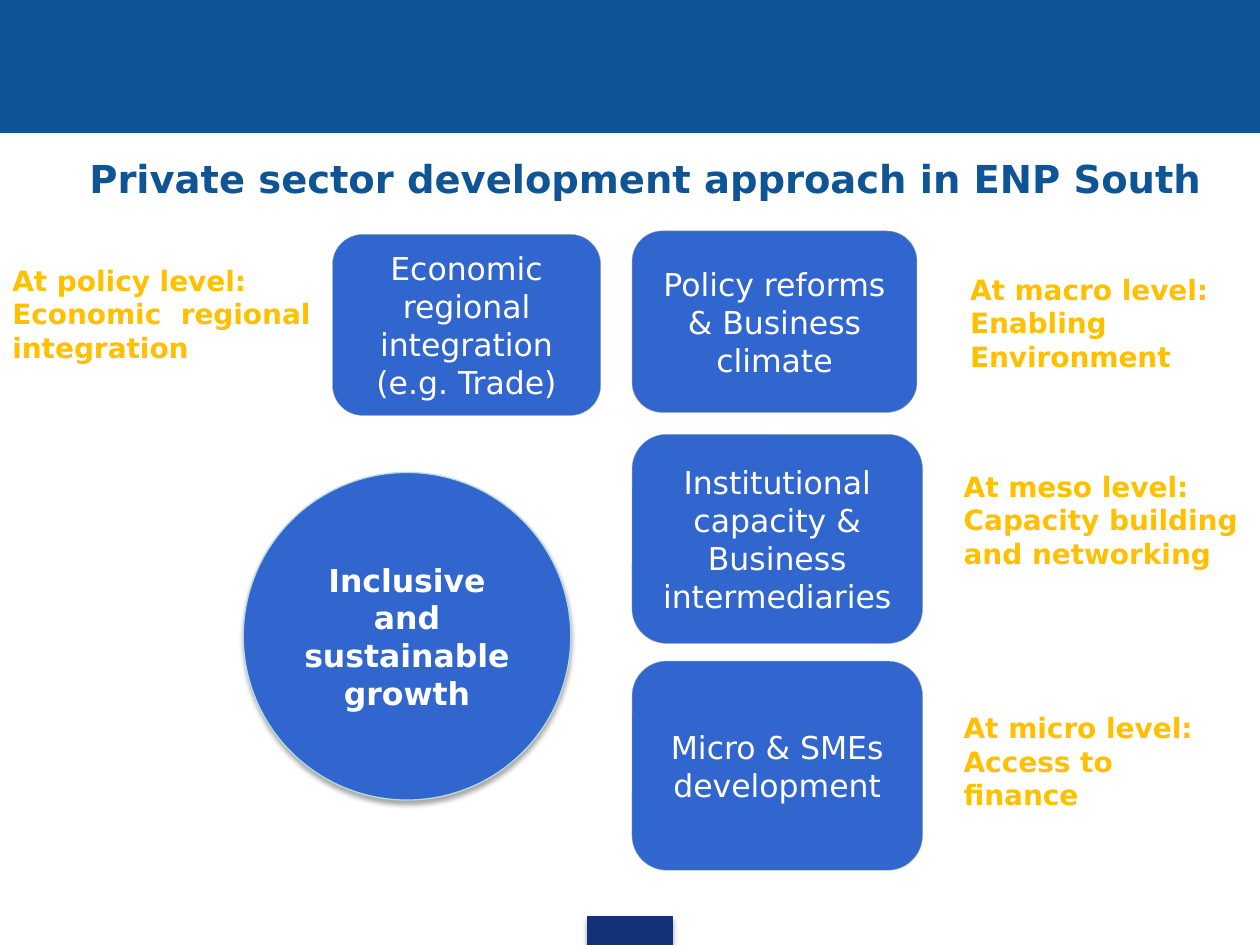
from pptx import Presentation
from pptx.dml.color import RGBColor as RGB
from pptx.enum.shapes import MSO_SHAPE as SHAPE
from pptx.enum.text import MSO_ANCHOR as ANCHOR, PP_ALIGN as ALIGN
from pptx.oxml import parse_xml
from pptx.util import Pt

FONT = "DejaVu Sans"
HEX = {
    "band": "0F5494", "foot": "133176", "box": "3166CF", "edge": "8AA6A8",
    "rim": "B6DCDF", "label": "FFC000", "text": "FFFFFF",
}
NS = "http://schemas.openxmlformats.org/drawingml/2006/main"
SHADE = (
    f'<a:effectLst xmlns:a="{NS}"><a:outerShdw blurRad="{Pt(3.1)}" '
    f'dist="{Pt(1.8)}" dir="5400000" rotWithShape="0"><a:srgbClr val="000000">'
    '<a:alpha val="35000"/></a:srgbClr></a:outerShdw></a:effectLst>'
)


def write(frame, lines, size, color, bold=False, align=ALIGN.LEFT):
    frame.word_wrap = True
    frame.text = "\n".join(lines)
    for para in frame.paragraphs:
        para.alignment = align
        font = para.font
        font.name, font.size, font.bold = FONT, Pt(size), bold
        font.color.rgb = RGB.from_string(HEX[color])


def add_form(slide, kind, box, fill, line, width, shade=False):
    form = slide.shapes.add_shape(kind, *map(Pt, box))
    form.fill.solid()
    form.fill.fore_color.rgb = RGB.from_string(HEX[fill])
    form.line.color.rgb = RGB.from_string(HEX[line])
    form.line.width = Pt(width)
    if shade:
        form._element.spPr.append(parse_xml(SHADE))
    else:
        form.shadow.inherit = False
    return form


def add_frame(slide, box):
    # Top band and footer tab
    left, top, width, height = box
    add_form(slide, SHAPE.RECTANGLE, (left, top, width, 75.6),
             "band", "band", 0.75)
    tab_w, tab_h = 48.4, 16
    add_form(slide, SHAPE.RECTANGLE,
             (left + (width - tab_w) / 2, top + height - tab_h, tab_w, tab_h),
             "foot", "foot", 0.75, shade=True)


def add_title(slide, box, text):
    frame = slide.shapes.add_textbox(*map(Pt, box)).text_frame
    frame.margin_left = Pt(35.3)
    frame.vertical_anchor = ANCHOR.MIDDLE
    write(frame, [text], 22, "band", bold=True)


def add_card(slide, box, text):
    card = add_form(slide, SHAPE.ROUNDED_RECTANGLE, box, "box", "edge", 0.25)
    card.text_frame.vertical_anchor = ANCHOR.MIDDLE
    write(card.text_frame, [text], 18, "text", align=ALIGN.CENTER)


def add_label(slide, box, lines):
    frame = slide.shapes.add_textbox(*map(Pt, box)).text_frame
    write(frame, lines, 16, "label", bold=True)


def add_goal(slide, box, text):
    goal = add_form(slide, SHAPE.OVAL, box, "box", "rim", 0.75, shade=True)
    goal.text_frame.vertical_anchor = ANCHOR.MIDDLE
    write(goal.text_frame, [text], 18, "text", True, ALIGN.CENTER)


def main():
    deck = Presentation()
    deck.slide_width, deck.slide_height = Pt(720), Pt(540)
    slide = deck.slides.add_slide(deck.slide_layouts[6])

    add_frame(slide, (0, 0, 720, 540))
    add_title(slide, (15.8, 71.3, 694, 61.2),
              "Private sector development approach in ENP South")

    # Fields of action
    col = 361.2
    cards = [
        ((190, 134, 153.2, 103.4),
         "Economic regional integration (e.g. Trade)"),
        ((col, 132, 162.8, 103.7), "Policy reforms & Business climate"),
        ((col, 248.2, 166, 119.5),
         "Institutional capacity & Business intermediaries"),
        ((col, 377.8, 166, 119.5), "Micro & SMEs development"),
    ]
    for box, text in cards:
        add_card(slide, box, text)

    # Levels beside the cards
    labels = [
        ((0, 146.9, 201.6, 77),
         ["At policy level: Economic  regional integration"]),
        ((547.2, 151.9, 164.2, 65.5),
         ["At macro level: Enabling Environment"]),
        ((543.6, 264.6, 176.4, 65.5),
         ["At meso level:", "Capacity building and networking"]),
        ((543.6, 402.5, 160.6, 65.5), ["At micro level: Access to finance"]),
    ]
    for box, lines in labels:
        add_label(slide, box, lines)

    add_goal(slide, (139, 270, 187.2, 187.2),
             "Inclusive and sustainable growth")
    deck.save("out.pptx")


if __name__ == "__main__":
    main()
